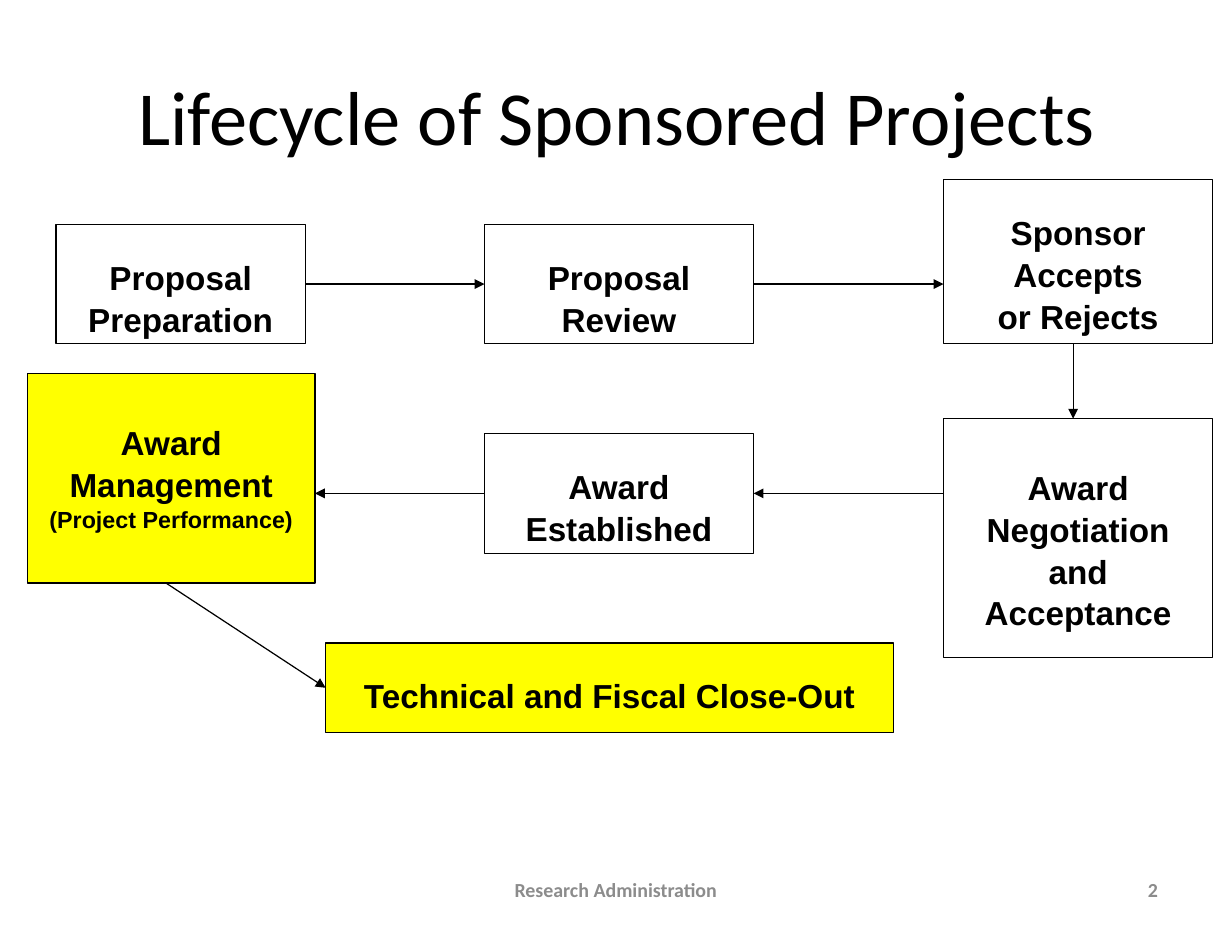
from dataclasses import dataclass

from lxml.etree import SubElement
from pptx import Presentation
from pptx.dml.color import RGBColor
from pptx.enum.shapes import MSO_CONNECTOR, MSO_SHAPE
from pptx.enum.text import MSO_ANCHOR, PP_ALIGN
from pptx.oxml.ns import qn
from pptx.util import Pt


@dataclass(frozen=True)
class Theme:
    black: RGBColor = RGBColor(0, 0, 0)
    white: RGBColor = RGBColor(255, 255, 255)
    yellow: RGBColor = RGBColor(255, 255, 0)
    gray: RGBColor = RGBColor(0x8C, 0x8C, 0x8C)
    heading_font: str = "Calibri"
    box_font: str = "Arial"
    title: int = 46
    body: int = 20
    note: int = 14
    footer: int = 12
    line: float = 0.75


THEME = Theme()
TOP, LEFT, BOTTOM, RIGHT = 0, 1, 2, 3


def add_text(tf, text, size, font=THEME.heading_font, color=THEME.black,
             bold=False, align=PP_ALIGN.CENTER, spacing=1.0, last_size=None):
    """Write one paragraph per line; last_size applies to the last line."""
    tf.word_wrap = True
    lines = text.split("\n")
    for i, line in enumerate(lines):
        p = tf.add_paragraph() if i else tf.paragraphs[0]
        p.alignment = align
        p.line_spacing = spacing
        r = p.add_run()
        r.text = line
        is_last = i == len(lines) - 1
        r.font.size = Pt(last_size if last_size and is_last else size)
        r.font.name = font
        r.font.bold = bold
        r.font.color.rgb = color


def add_label(s, x, y, w, h, text, size, **style):
    tf = s.shapes.add_textbox(Pt(x), Pt(y), Pt(w), Pt(h)).text_frame
    tf.vertical_anchor = MSO_ANCHOR.MIDDLE
    add_text(tf, text, size, **style)


def add_step(s, x, y, w, h, text, fill=THEME.white, inset=18.5, note_size=None):
    sp = s.shapes.add_shape(MSO_SHAPE.RECTANGLE, Pt(x), Pt(y), Pt(w), Pt(h))
    sp.shadow.inherit = False
    sp.fill.solid()
    sp.fill.fore_color.rgb = fill
    sp.line.color.rgb = THEME.black
    sp.line.width = Pt(THEME.line)
    tf = sp.text_frame
    tf.vertical_anchor = MSO_ANCHOR.TOP
    tf.margin_top = Pt(inset)
    add_text(tf, text, THEME.body, font=THEME.box_font, bold=True,
             spacing=1.05, last_size=note_size)
    return sp


def add_arrow(s, start, end, begin=None, finish=None):
    """Draw an arrow; begin and finish are (shape, side) pairs to join."""
    points = [Pt(v) for v in (*start, *end)]
    c = s.shapes.add_connector(MSO_CONNECTOR.STRAIGHT, *points)
    if begin:
        c.begin_connect(*begin)
    if finish:
        c.end_connect(*finish)
    c.line.color.rgb = THEME.black
    c.line.width = Pt(THEME.line)
    SubElement(c.line._get_or_add_ln(), qn("a:tailEnd"), type="triangle")
    SubElement(c._element.spPr, qn("a:effectLst"))


def main():
    prs = Presentation()
    prs.slide_width, prs.slide_height = Pt(741.6), Pt(561.6)
    s = prs.slides.add_slide(prs.slide_layouts[6])

    add_label(s, 37.4, 22.3, 667.4, 93.6, "Lifecycle of Sponsored Projects",
              THEME.title)

    middle_x, right_x, step_w, step_h = 291.6, 568, 162, 72
    row_1, row_2 = 171, 297
    preparation = add_step(s, 33.8, row_1 - step_h / 2, 150, step_h,
                           "Proposal Preparation")
    review = add_step(s, middle_x, row_1 - step_h / 2, step_w, step_h,
                      "Proposal\nReview")
    add_step(s, right_x, 108, step_w, 99, "Sponsor\nAccepts\nor Rejects")
    add_step(s, right_x, 252, step_w, 144,
             "Award Negotiation\nand\nAcceptance", inset=28)
    established = add_step(s, middle_x, row_2 - step_h / 2, step_w, step_h,
                           "Award Established")
    add_step(s, 16.6, 225, 173, 126,
             "Award Management\n(Project Performance)",
             fill=THEME.yellow, inset=28, note_size=THEME.note)
    close_out = add_step(s, 196, 387, 342, 54,
                         "Technical and Fiscal Close-Out", fill=THEME.yellow)

    middle_end = middle_x + step_w
    add_arrow(s, (183.8, row_1), (middle_x, row_1),
              (preparation, RIGHT), (review, LEFT))
    add_arrow(s, (middle_end, row_1), (right_x, row_1), begin=(review, RIGHT))
    add_arrow(s, (646, 207), (646, 252))
    add_arrow(s, (right_x, row_2), (middle_end, row_2),
              finish=(established, RIGHT))
    add_arrow(s, (middle_x, row_2), (189.6, row_2), begin=(established, LEFT))
    add_arrow(s, (100, 351), (196, 414), finish=(close_out, LEFT))

    footer = {"size": THEME.footer, "color": THEME.gray, "bold": True}
    add_label(s, 253.4, 520.6, 234.7, 30, "Research Administration", **footer)
    add_label(s, 531.4, 520.6, 172.8, 30, "2", align=PP_ALIGN.RIGHT, **footer)

    prs.save("out.pptx")


if __name__ == "__main__":
    main()
